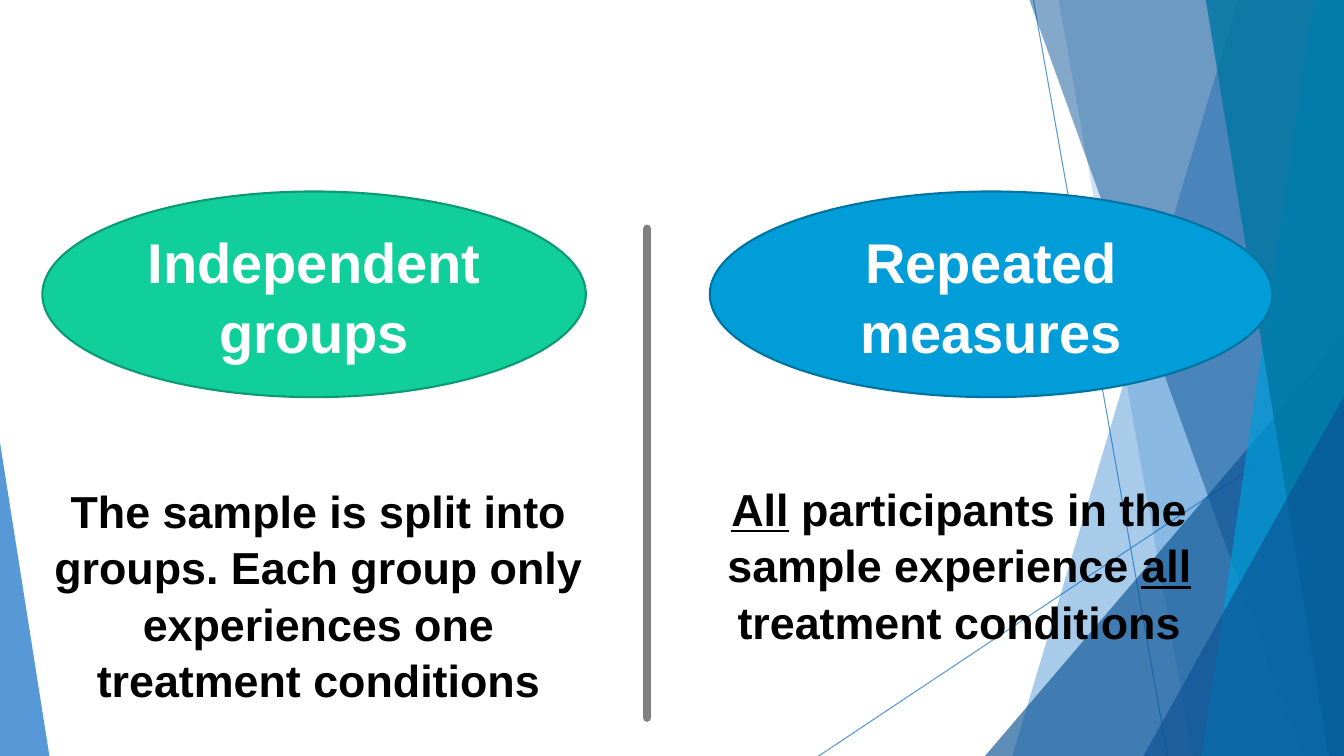
from lxml.etree import SubElement
from pptx import Presentation
from pptx.dml.color import RGBColor
from pptx.enum.shapes import MSO_CONNECTOR, MSO_SHAPE
from pptx.enum.text import MSO_ANCHOR, PP_ALIGN
from pptx.oxml.ns import qn
from pptx.util import Inches, Pt

WIDTH, HEIGHT = 13.33, 7.5
COLORS = {
    "blue": "0F6FC6", "navy": "0B5394", "sky": "009DD9", "sky_edge": "0074A1",
    "teal": "0076A3", "green": "10CF9B", "green_edge": "0C9973",
    "gray": "808080", "white": "FFFFFF", "black": "000000",
}


def rgb(name):
    return RGBColor.from_string(COLORS[name])


def set_alpha(fill_xml, percent):
    color = fill_xml.find(".//" + qn("a:srgbClr"))
    SubElement(color, qn("a:alpha"), val=str(percent * 1000))


def set_fill(sp, color, alpha=None):
    sp.shadow.inherit = False
    sp.fill.solid()
    sp.fill.fore_color.rgb = rgb(color)
    if alpha:
        set_alpha(sp._element.spPr.find(qn("a:solidFill")), alpha)


def add_line(s, start, end, color, width, alpha=None, cap="flat"):
    x1, y1, x2, y2 = (Inches(v) for v in start + end)
    line = s.shapes.add_connector(MSO_CONNECTOR.STRAIGHT, x1, y1, x2, y2)
    line.line.color.rgb = rgb(color)
    line.line.width = Pt(width)
    ln = line.line._get_or_add_ln()
    ln.set("cap", cap)
    if alpha:
        set_alpha(ln, alpha)
    SubElement(line._element.spPr, qn("a:effectLst"))


def add_band(s, top_left, bottom_left, color, alpha):
    """Band from a slanted left edge to the right edge of the slide."""
    fb = s.shapes.build_freeform(Inches(top_left), 0, scale=1.0)
    corners = [(WIDTH, 0), (WIDTH, HEIGHT), (bottom_left, HEIGHT)]
    fb.add_line_segments([(Inches(x), Inches(y)) for x, y in corners])
    sp = fb.convert_to_shape()
    set_fill(sp, color, alpha)
    sp.line.fill.background()


def add_triangle(s, left, width, height, apex, color, alpha):
    """Triangle that stands on the bottom edge of the slide."""
    sp = s.shapes.add_shape(MSO_SHAPE.ISOSCELES_TRIANGLE, Inches(left),
                            Inches(HEIGHT - height), Inches(width), Inches(height))
    sp.adjustments[0] = apex
    set_fill(sp, color, alpha)
    sp.line.fill.background()


def write(tf, runs, size, color):
    """Write (text, underlined) runs as one centred paragraph."""
    tf.word_wrap = True
    p = tf.paragraphs[0]
    p.alignment = PP_ALIGN.CENTER
    p.line_spacing = 1.05
    for text, underline in runs:
        r = p.add_run()
        r.text = text
        r.font.color.rgb = rgb(color)
        font = {"name": "Arial", "size": Pt(size), "bold": True, "underline": underline}
        for key, value in font.items():
            setattr(r.font, key, value)


def add_heading(s, left, width, text, fill, edge):
    sp = s.shapes.add_shape(MSO_SHAPE.OVAL, Inches(left), Inches(1.9),
                            Inches(width), Inches(2.04))
    set_fill(sp, fill)
    sp.line.color.rgb = rgb(edge)
    sp.line.width = Pt(1.5)
    sp.text_frame.vertical_anchor = MSO_ANCHOR.MIDDLE
    write(sp.text_frame, [(text, False)], 40, "white")


def add_description(s, left, top, width, height, runs):
    box = s.shapes.add_textbox(Inches(left), Inches(top), Inches(width), Inches(height))
    write(box.text_frame, runs, 32, "black")


def add_backdrop(s):
    add_line(s, (10.25, 0), (11.58, HEIGHT), "blue", 0.75, 70)
    add_line(s, (WIDTH, 4.03), (8.12, HEIGHT), "blue", 0.75, 70)
    add_band(s, 12.28, 10.04, "blue", 36)
    add_band(s, 10.5, 11.83, "blue", 20)
    add_triangle(s, 9.77, 3.56, 4.17, 1, "navy", 66)
    add_band(s, 10.21, 12.91, "navy", 50)
    add_band(s, 13.03, 11.92, "sky", 70)
    add_band(s, 11.96, 13.18, "teal", 80)
    add_triangle(s, 11.34, 1.99, 3.57, 1, "navy", 66)
    add_triangle(s, 0, 0.49, 3.11, 0, "blue", 70)


def main():
    prs = Presentation()
    prs.slide_width, prs.slide_height = Inches(WIDTH), Inches(HEIGHT)
    s = prs.slides.add_slide(prs.slide_layouts[6])
    add_backdrop(s)

    # Headings and divider
    add_heading(s, 7.04, 5.58, "Repeated measures", "sky", "sky_edge")
    add_heading(s, 0.42, 5.39, "Independent groups", "green", "green_edge")
    add_line(s, (6.42, 2.27), (6.42, 7.12), "gray", 6, cap="rnd")

    # Descriptions
    add_description(s, 7.04, 4.7, 4.95, 1.72, [
        ("All", True), (" participants in the sample experience ", False),
        ("all", True), (" treatment conditions", False)])
    add_description(s, 0.32, 4.72, 5.68, 2.26, [
        ("The sample is split into groups. Each group only experiences one "
         "treatment conditions", False)])
    prs.save("out.pptx")


if __name__ == "__main__":
    main()
